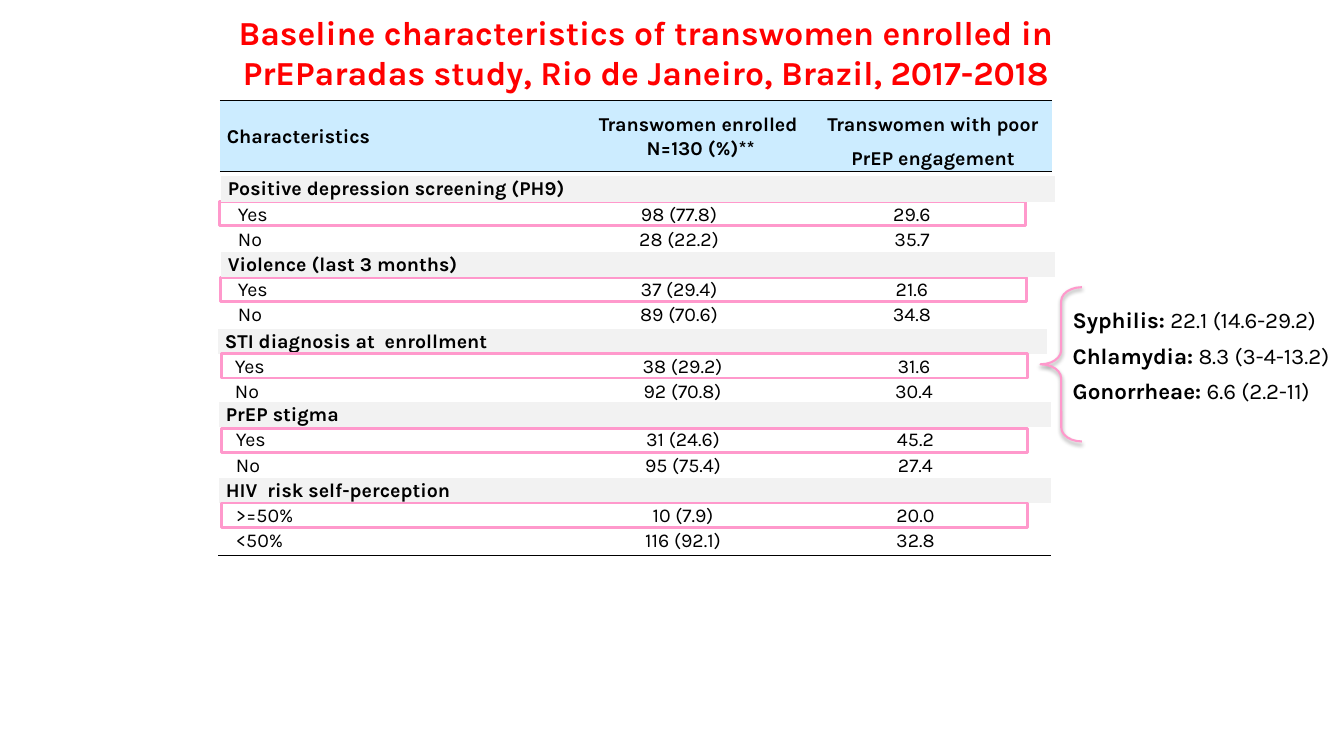
from lxml import etree
from pptx import Presentation
from pptx.dml.color import RGBColor
from pptx.enum.shapes import MSO_CONNECTOR, MSO_SHAPE
from pptx.enum.text import MSO_ANCHOR, MSO_AUTO_SIZE, PP_ALIGN
from pptx.oxml.ns import qn
from pptx.util import Pt

LEFT, CENTER = PP_ALIGN.LEFT, PP_ALIGN.CENTER
TOP, MIDDLE = MSO_ANCHOR.TOP, MSO_ANCHOR.MIDDLE
NO_FIT = MSO_AUTO_SIZE.NONE
RECT, BRACE = MSO_SHAPE.RECTANGLE, MSO_SHAPE.LEFT_BRACE
STRAIGHT = MSO_CONNECTOR.STRAIGHT

PX = 9144
ROW = 25
FONT = "Karla"
BLACK, RED, PINK, GREY, BLUE = "000000", "FF0000", "FF99CC", "F2F2F2", "CCECFF"
PLAIN_TABLE = "{2D5ABB26-0587-4C30-8999-92F81FD0307C}"

TITLE = ("Baseline characteristics of transwomen enrolled in "
         "PrEParadas study, Rio de Janeiro, Brazil, 2017-2018")
HEADERS = [["Characteristics"],
           ["Transwomen enrolled ", "N=130 (%)**"],
           ["Transwomen with poor PrEP engagement"]]
STIGMA_RISK = [("PrEP stigma",),
               ("Yes", "31 (24.6)", "45.2"),
               ("No", "95 (75.4)", "27.4"),
               ("HIV  risk self-perception",),
               (">=50%", "10 (7.9)", "20.0"),
               ("<50%", "116 (92.1)", "32.8")]
STI = [("STI diagnosis at  enrollment",),
       ("Yes", "38 (29.2)", "31.6"),
       ("No", "92 (70.8)", "30.4")]
DEPRESSION_VIOLENCE = [("Positive depression screening (PH9)",),
                       ("Yes", "98 (77.8)", "29.6"),
                       ("No", "28 (22.2)", "35.7"),
                       ("Violence (last 3 months)",),
                       ("Yes", "37 (29.4)", "21.6"),
                       ("No", "89 (70.6)", "34.8")]
HIGHLIGHTS = [(218, 200), (219, 275), (220, 351), (220, 425), (220, 499)]
PREVALENCES = [("Syphilis:", " 22.1 (14.6-29.2)"),
               ("Chlamydia:", " 8.3 (3-4-13.2)"),
               ("Gonorrheae:", " 6.6 (2.2-11)")]


def emu(*lengths):
    return [n * PX for n in lengths]


def rgb(color):
    return RGBColor.from_string(color)


def add_run(p, text, size, bold=False, color=BLACK):
    r = p.add_run()
    r.text = text
    r.font.name = FONT
    r.font.size = Pt(size)
    r.font.bold = bold
    r.font.color.rgb = rgb(color)


def add_outline(s, kind, box, width):
    sp = s.shapes.add_shape(kind, *emu(*box))
    sp.shadow.inherit = False
    sp.fill.background()
    sp.line.color.rgb = rgb(PINK)
    sp.line.width = Pt(width)
    return sp


def add_grid(s, x, y, cols, heights):
    frame = s.shapes.add_table(len(heights), len(cols),
                               *emu(x, y, sum(cols), sum(heights)))
    table = frame.table
    table.first_row = table.horz_banding = False
    frame._element.find(".//" + qn("a:tableStyleId")).text = PLAIN_TABLE
    for column, width in zip(table.columns, cols):
        column.width = width * PX
    for row, height in zip(table.rows, heights):
        row.height = height * PX
    return table


def fill_cell(cell, lines, align, bold=False, fill=None, spacing=1.07, indent=0, anchor=TOP):
    cell.margin_left = cell.margin_right = 7 * PX
    cell.margin_top = cell.margin_bottom = 0
    cell.vertical_anchor = anchor
    if fill:
        cell.fill.solid()
        cell.fill.fore_color.rgb = rgb(fill)
    else:
        cell.fill.background()
    tf = cell.text_frame
    for i, line in enumerate(lines):
        p = tf.add_paragraph() if i else tf.paragraphs[0]
        p.alignment = align
        p.line_spacing = spacing
        if indent:
            p._p.get_or_add_pPr().set("indent", str(indent * PX))
        if line:
            add_run(p, line, 14, bold)
        else:
            etree.SubElement(p._p, qn("a:endParaRPr")).set("sz", "1400")


def add_cell_rules(cell):
    tc_pr = cell._tc.get_or_add_tcPr()
    for i, side in enumerate(("a:lnT", "a:lnB")):
        ln = etree.Element(qn(side), w=str(Pt(1)))
        fill = etree.SubElement(ln, qn("a:solidFill"))
        etree.SubElement(fill, qn("a:srgbClr"), val=BLACK)
        tc_pr.insert(i, ln)


def add_title(s, box):
    sp = s.shapes.title
    sp.left, sp.top, sp.width, sp.height = emu(*box)
    tf = sp.text_frame
    tf.word_wrap = True
    tf.auto_size = NO_FIT
    tf.vertical_anchor = MIDDLE
    p = tf.paragraphs[0]
    p.alignment = CENTER
    add_run(p, TITLE, 24, True, RED)


def add_header(s, x, y, cols, height):
    table = add_grid(s, x, y, cols, [height])
    for c, (lines, align, spacing) in enumerate(
            zip(HEADERS, (LEFT, CENTER, CENTER), (1.07, 1.07, 1.5))):
        cell = table.cell(0, c)
        fill_cell(cell, lines, align, True, BLUE, spacing, anchor=MIDDLE)
        add_cell_rules(cell)


def add_section(s, x, y, cols, rows):
    table = add_grid(s, x, y, cols, [ROW] * len(rows))
    for r, row in enumerate(rows):
        heading = len(row) == 1
        texts = row + ("", "") if heading else row
        for c, text in enumerate(texts):
            fill_cell(table.cell(r, c), [text], CENTER if c else LEFT, heading,
                      GREY if heading else None, indent=0 if c or heading else 10)


def add_bottom_rule(s, x, y, width):
    line = s.shapes.add_connector(STRAIGHT, *emu(x + width, y, x, y))
    line.line.color.rgb = rgb(BLACK)
    line.line.width = Pt(1)
    etree.SubElement(line._element.spPr, qn("a:effectLst"))


def add_prevalences(s, x, y):
    brace = add_outline(s, BRACE, (x, y, 41, 153), 1.5)
    brace.adjustments[0] = 0.34
    brace.adjustments[1] = 0.5
    effects = brace._element.spPr.find(qn("a:effectLst"))
    shadow = etree.SubElement(effects, qn("a:outerShdw"), blurRad=str(Pt(3.1)),
                              dist=str(Pt(1.6)), dir="5400000", rotWithShape="0")
    color = etree.SubElement(shadow, qn("a:srgbClr"), val=BLACK)
    etree.SubElement(color, qn("a:alpha"), val="38000")

    tf = s.shapes.add_textbox(*emu(x + 22, y + 14, 279, 111)).text_frame
    tf.word_wrap = False
    for i, (name, value) in enumerate(PREVALENCES):
        p = tf.add_paragraph() if i else tf.paragraphs[0]
        p.alignment = LEFT
        p.space_after = Pt(6)
        add_run(p, name, 16, True)
        add_run(p, value, 16)


def main():
    prs = Presentation()
    prs.slide_width, prs.slide_height = emu(1333, 750)
    s = prs.slides.add_slide(prs.slide_layouts[5])
    add_section(s, 217, 399, (364, 193, 268), STIGMA_RISK)
    add_section(s, 216, 326, (363, 196, 263), STI)
    add_header(s, 218, 100, (364, 226, 235), 70)
    add_title(s, (151, 6, 979, 91))
    for x, y in HIGHLIGHTS:
        add_outline(s, RECT, (x, y, 799, 24), 2)
    add_bottom_rule(s, 216, 551, 826)
    add_section(s, 219, 175, (365, 179, 283), DEPRESSION_VIOLENCE)
    add_prevalences(s, 1032, 285)
    prs.save("out.pptx")


if __name__ == "__main__":
    main()
